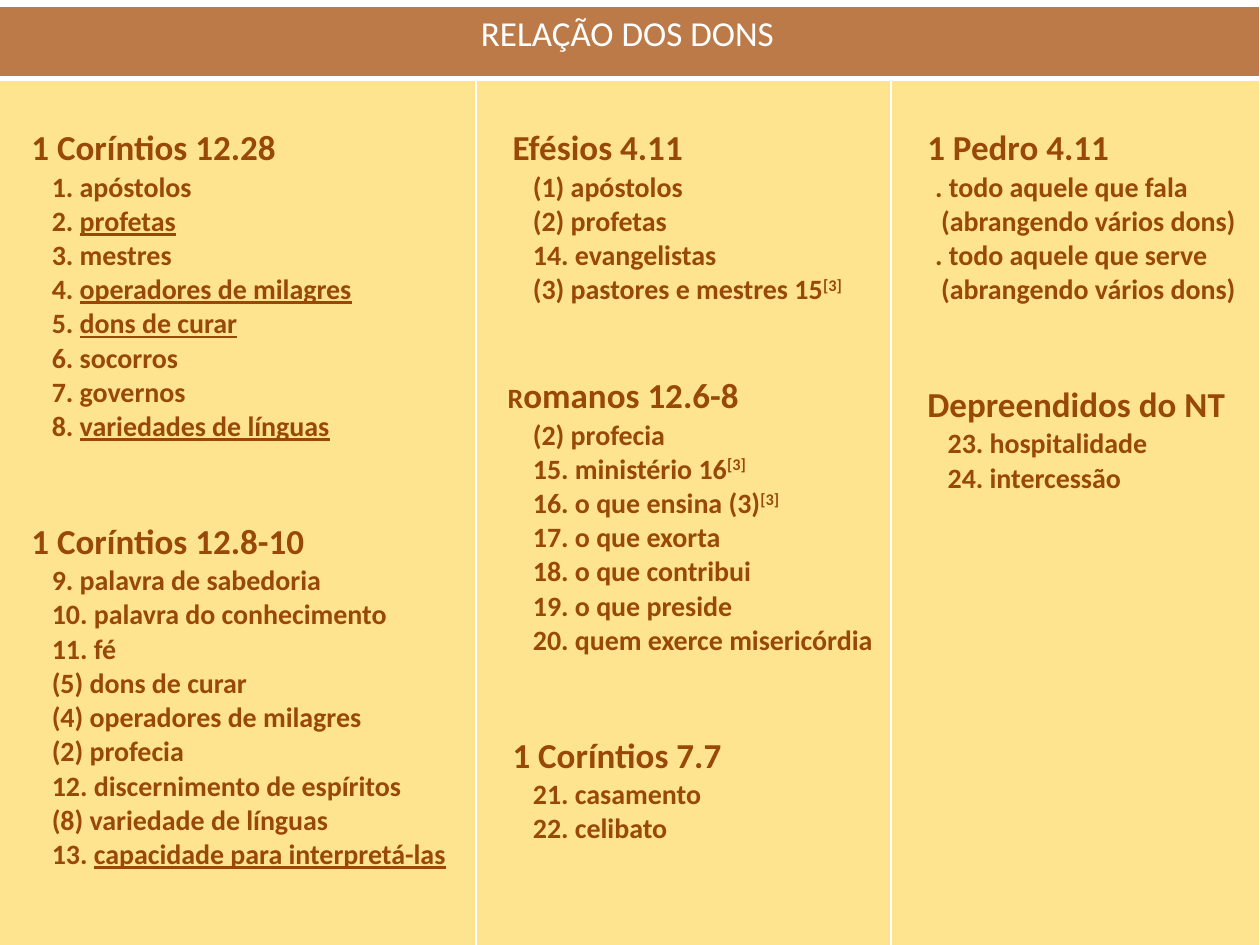
from lxml import etree
from pptx import Presentation
from pptx.dml.color import RGBColor
from pptx.enum import text
from pptx.oxml import ns
from pptx.util import Cm, Pt

FONT, BROWN, WHITE = "Calibri", "984807", "FFFFFF"
HEAD, BODY = "BC7A48", "FFE48F"
WIDTHS, HEIGHTS = (9.7, 8.36, 7.44), (1.45, 17.96)

# Each column is a list of groups: heading, then its lines.
# "_" starts underlined text and "^" starts superscript text.
COLUMNS = [
    [("1 Coríntios 12.28",
      ["1. apóstolos", "2. _profetas", "3. mestres",
       "4. _operadores de milagres", "5. _dons de curar", "6. socorros",
       "7. governos", "8. _variedades de línguas"]),
     ("1 Coríntios 12.8-10",
      ["9. palavra de sabedoria", "10. palavra do conhecimento", "11. fé",
       "(5) dons de curar", "(4) operadores de milagres", "(2) profecia",
       "12. discernimento de espíritos", "(8) variedade de línguas",
       "13. _capacidade para interpretá-las"])],
    [("Efésios 4.11",
      ["(1) apóstolos", "(2) profetas", "14. evangelistas",
       "(3) pastores e mestres 15^[3]"]),
     ("Romanos 12.6-8",
      ["(2) profecia", "15. ministério 16^[3]", "16. o que ensina (3)^[3]",
       "17. o que exorta", "18. o que contribui", "19. o que preside",
       "20. quem exerce misericórdia"]),
     ("1 Coríntios 7.7", ["21. casamento", "22. celibato"])],
    [("1 Pedro 4.11",
      [". todo aquele que fala (abrangendo vários dons)",
       ". todo aquele que serve (abrangendo vários dons)"]),
     ("Depreendidos do NT", ["23. hospitalidade", "24. intercessão"])],
]


def color(hex):
    return RGBColor.from_string(hex)


def add_run(par, words, size, **extra):
    run = par.add_run()
    run.text = words
    form = {"name": FONT, "size": Pt(size), "bold": True, **extra}
    for key, value in form.items():
        setattr(run.font, key, value)
    run.font.color.rgb = color(BROWN)
    return run


def add_line(par, words):
    """Write one entry, with its underlined or raised ending."""
    if "_" in words:
        start, end = words.split("_")
        add_run(par, start, 16)
        add_run(par, end, 16, underline=True)
    elif "^" in words:
        start, end = words.split("^")
        add_run(par, start, 16)
        run = add_run(par, end, 16)
        run._r.get_or_add_rPr().set("baseline", "30000")
    else:
        add_run(par, words, 16)


def indent(par, left, first=0):
    props = par._p.get_or_add_pPr()
    props.set("marL", str(Cm(left)))
    props.set("indent", str(Cm(first)))


def style_cell(cell, fill, base=1):
    """Draw white borders, then the fill."""
    props = cell._tc.get_or_add_tcPr()
    for side, width in (("L", 1), ("R", 1), ("T", 1), ("B", base)):
        line = etree.SubElement(props, ns.qn("a:ln" + side), w=str(Pt(width)))
        solid = etree.SubElement(line, ns.qn("a:solidFill"))
        etree.SubElement(solid, ns.qn("a:srgbClr"), val=WHITE)
    cell.fill.solid()
    cell.fill.fore_color.rgb = color(fill)


def fill_title(cell, words):
    par = cell.text_frame.paragraphs[0]
    par.alignment = text.PP_ALIGN.CENTER
    run = add_run(par, words, 20, bold=False)
    run.font.color.rgb = color(WHITE)


def fill_column(cell, groups):
    cell.margin_top = Cm(0.99)
    frame = cell.text_frame
    for spot, (title, lines) in enumerate(groups):
        # Heading
        par = frame.add_paragraph() if spot else frame.paragraphs[0]
        small = title.startswith("Romanos")  # its initial is smaller
        indent(par, 0.38 if small else 0.48)
        if spot:
            par.space_before = Pt(39 if small else 44)
        if small:
            add_run(par, title[0], 16)
            title = title[1:]
        add_run(par, title, 20)
        # Entries
        for words in lines:
            par = frame.add_paragraph()
            if words.startswith("."):
                indent(par, 0.76, -0.12)
            else:
                indent(par, 0.89)
            add_line(par, words)


def add_gifts(slide, left, top):
    table = slide.shapes.add_table(
        2, 3, Cm(left), Cm(top), Cm(sum(WIDTHS)), Cm(sum(HEIGHTS))).table
    table.first_row = table.horz_banding = False
    for col, width in zip(table.columns, WIDTHS):
        col.width = Cm(width)
    for row, height in zip(table.rows, HEIGHTS):
        row.height = Cm(height)
    # Title row
    table.cell(0, 0).merge(table.cell(0, 2))
    for cell in table.rows[0].cells:
        style_cell(cell, HEAD, 3)
    fill_title(table.cell(0, 0), "RELAÇÃO DOS DONS")
    # Lists of gifts
    for cell, groups in zip(table.rows[1].cells, COLUMNS):
        style_cell(cell, BODY)
        fill_column(cell, groups)


def main():
    deck = Presentation()
    deck.slide_width, deck.slide_height = Cm(25.4), Cm(19.05)
    slide = deck.slides.add_slide(deck.slide_layouts[6])
    add_gifts(slide, -0.1, 0.13)
    deck.save("out.pptx")


if __name__ == "__main__":
    main()
